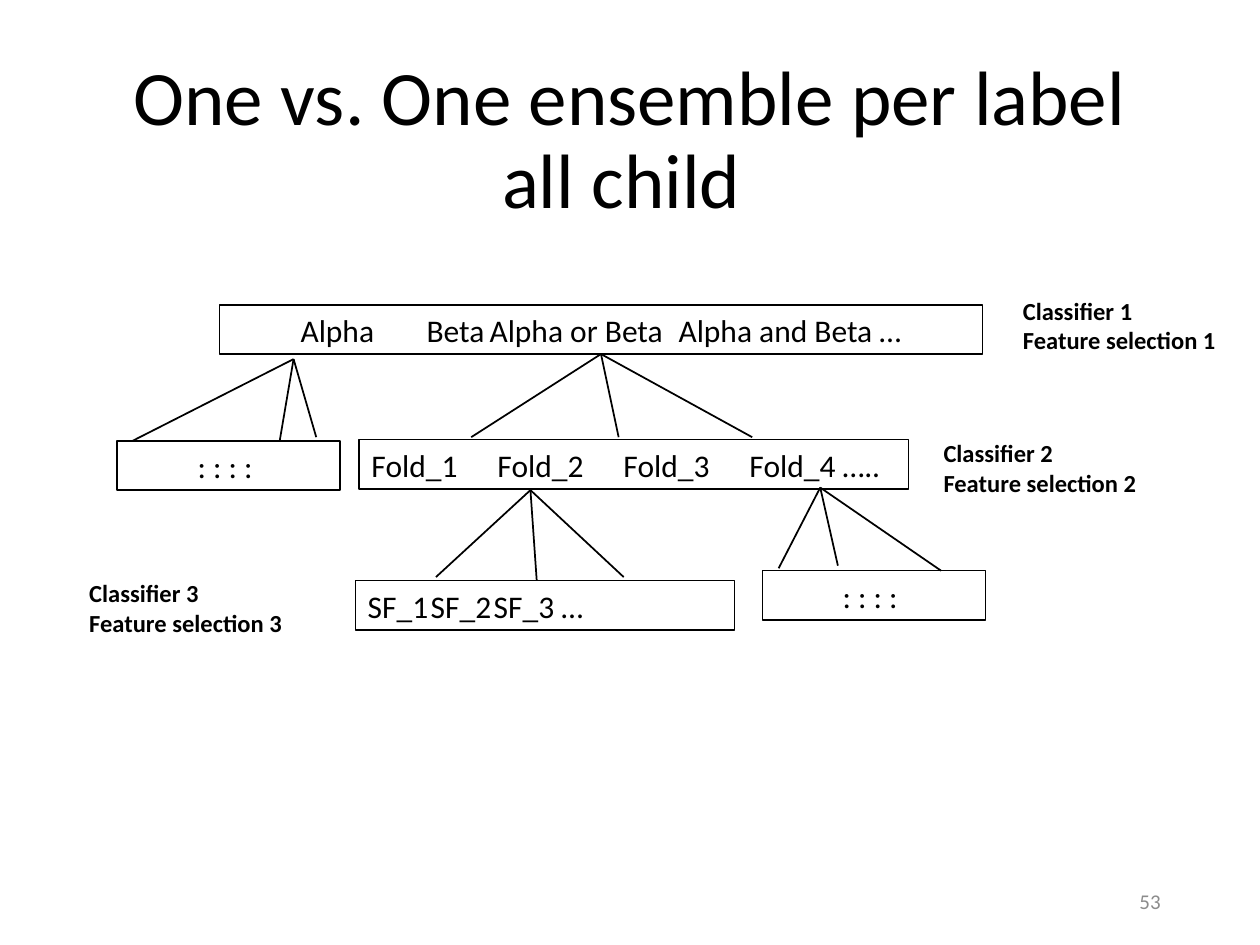
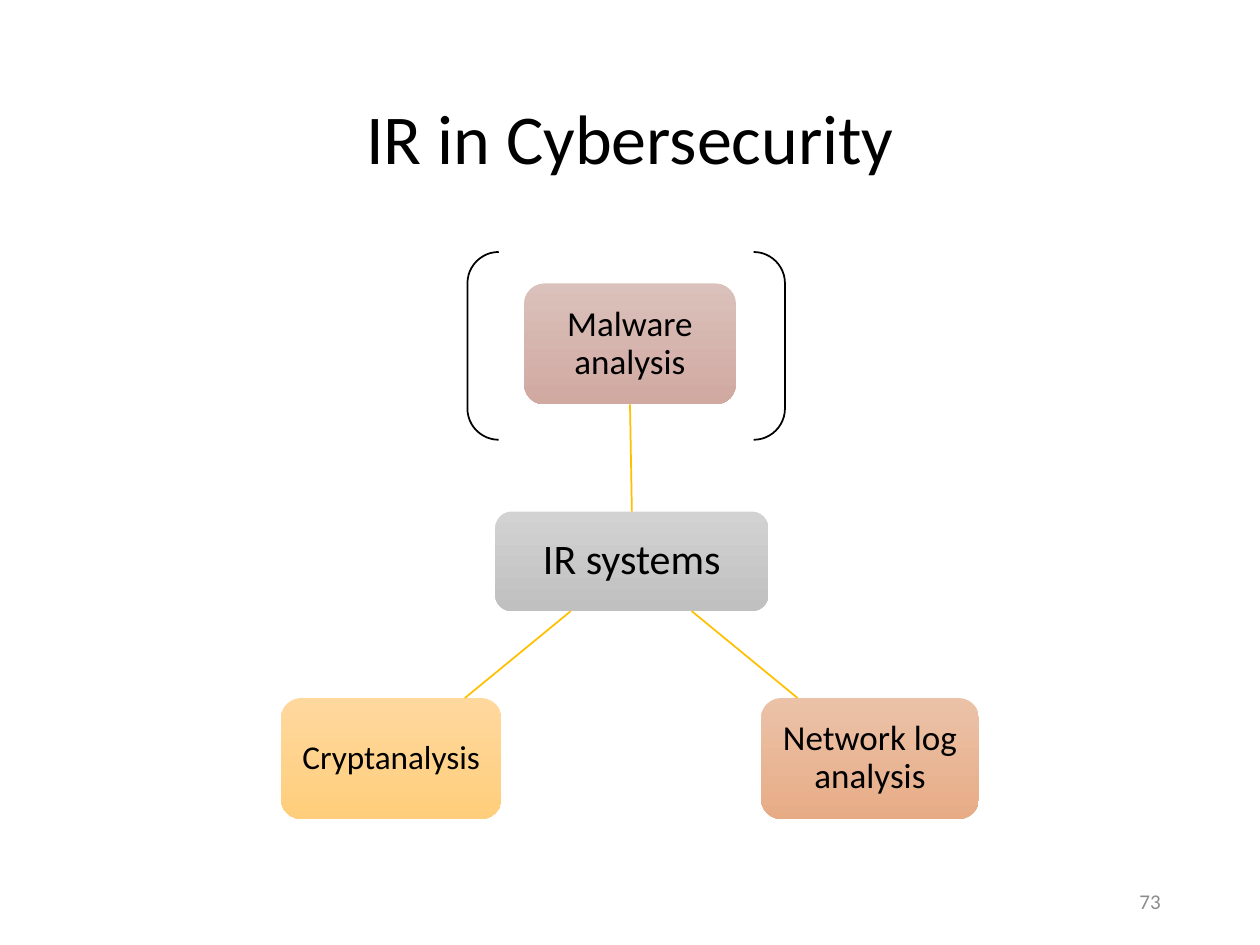
"""Builds two slides: a tree of classifiers and a map of IR in cybersecurity."""
from dataclasses import dataclass

from lxml import etree
from pptx import Presentation
from pptx import util as u
from pptx.dml import color
from pptx.enum import shapes, text
from pptx.oxml import ns


@dataclass(frozen=True)
class Theme:
    font: str = "Calibri"
    ink: str = "000000"
    muted: str = "8C8C8C"
    link: str = "FFC000"
    grey: tuple = ("D2D2D2", "C0C0C0")
    rose: tuple = ("DBC1BB", "D0A9A1")
    orange: tuple = ("EBC2A8", "E7AC86")
    yellow: tuple = ("FFD89E", "FFCE7C")
    title: int = 44
    short_title: int = 40
    hub: int = 24
    node: int = 20
    small_node: int = 19
    body: int = 18
    label: int = 14
    footer: int = 12
    thin: float = 0.75
    line: float = 1


class Deck:
    def __init__(self, theme):
        self.theme = theme
        self.show = Presentation()
        self.show.slide_width, self.show.slide_height = u.Inches(10), u.Inches(7.5)
        self.slide = None

    def new_slide(self, title, size, number):
        self.slide = self.show.slides.add_slide(self.show.slide_layouts[6])
        self.words((0.69, 0.4, 8.62, 1.45), title, size, align="CENTER",
                   anchor="MIDDLE", spacing=0.9)
        self.words((7.06, 6.95, 2.25, 0.4), number, self.theme.footer,
                   ink=self.theme.muted, align="RIGHT", anchor="MIDDLE")

    def set_words(self, shape, content, size, ink=None, bold=False, align="LEFT",
                  anchor="TOP", spacing=None):
        frame = shape.text_frame
        frame.text = content
        frame.word_wrap = True
        frame.vertical_anchor = text.MSO_ANCHOR[anchor]
        for paragraph in frame.paragraphs:
            paragraph.alignment = text.PP_ALIGN[align]
            paragraph.line_spacing = spacing
            for run in paragraph.runs:
                run.font.name = self.theme.font
                run.font.size = u.Pt(size)
                run.font.bold = bold
                run.font.color.rgb = color.RGBColor.from_string(ink or self.theme.ink)

    def words(self, place, content, size, **style):
        box = self.slide.shapes.add_textbox(*map(u.Inches, place))
        self.set_words(box, content, size, **style)

    def outline(self, kind, place, width):
        shape = self.slide.shapes.add_shape(kind, *map(u.Inches, place))
        shape.shadow.inherit = False
        shape.fill.background()
        shape.line.color.rgb = color.RGBColor.from_string(self.theme.ink)
        shape.line.width = u.Pt(width)
        return shape

    def level(self, left, top, width, content, align="LEFT"):
        box = self.outline(shapes.MSO_SHAPE.RECTANGLE, (left, top, width, 0.39),
                           self.theme.thin)
        self.set_words(box, content, self.theme.body, align=align)
        return box

    def node(self, place, content, size, shades):
        box = self.outline(shapes.MSO_SHAPE.ROUNDED_RECTANGLE, place, self.theme.line)
        box.line.fill.background()
        box.fill.gradient()
        box.fill.gradient_angle = 270
        for stop, shade in zip(box.fill.gradient_stops, shades):
            stop.color.rgb = color.RGBColor.from_string(shade)
        self.set_words(box, content, size, align="CENTER", anchor="MIDDLE", spacing=0.9)
        return box

    def line(self, start, end, ink=None):
        link = self.slide.shapes.add_connector(
            shapes.MSO_CONNECTOR.STRAIGHT, *map(u.Inches, (*start, *end)))
        link.line.color.rgb = color.RGBColor.from_string(ink or self.theme.ink)
        link.line.width = u.Pt(self.theme.line)
        etree.SubElement(link.element.spPr, ns.qn("a:effectLst"))
        return link

    def fan(self, apex, ends):
        return [self.line(apex, end) for end in ends]


def classifier_tree(deck):
    deck.new_slide("One vs. One ensemble per label all child ", deck.theme.title, "53")
    classes = deck.level(1.74, 2.42, 6.06, "Alpha\tBeta\tAlpha or Beta\tAlpha and Beta …",
                         "CENTER")
    deck.level(2.85, 3.49, 4.36, "Fold_1\tFold_2\tFold_3\tFold_4 …..")
    deck.level(2.82, 4.61, 3.01, "SF_1\tSF_2\tSF_3 …")
    for left, top in ((0.93, 3.5), (6.05, 4.53)):
        deck.level(left, top, 1.77, ": : : : ", "CENTER")

    deck.fan((2.33, 2.85), ((1.05, 3.5), (2.22, 3.5), (2.51, 3.47)))
    for branch in deck.fan((4.77, 2.81), ((3.74, 3.47), (4.91, 3.47), (5.97, 3.47))):
        branch.begin_connect(classes, 2)
    deck.fan((4.21, 3.89), ((3.46, 4.58), (4.26, 4.61), (4.95, 4.58)))
    deck.fan((6.51, 3.87), ((6.18, 4.51), (6.65, 4.49), (7.47, 4.53)))

    for step, (left, top) in enumerate(((8.02, 2.3), (7.39, 3.43), (0.61, 4.54)), 1):
        deck.words((left, top, 1.86, 0.57),
                   f"Classifier {step}\nFeature selection {step}",
                   deck.theme.label, bold=True)


def cybersecurity_map(deck):
    theme = deck.theme
    deck.new_slide("IR in Cybersecurity", theme.short_title, "73")
    systems = deck.node((3.93, 4.06, 2.17, 0.79), "IR systems", theme.hub, theme.grey)
    malware = deck.node((4.16, 2.25, 1.68, 0.96), "Malware analysis", theme.node, theme.rose)
    deck.node((6.04, 5.54, 1.73, 0.96), "Network log analysis", theme.node, theme.orange)
    deck.node((2.23, 5.54, 1.75, 0.96), "Cryptanalysis", theme.small_node, theme.yellow)

    upward = deck.line((5.01, 4.06), (5, 3.21), theme.link)
    upward.begin_connect(systems, 0)
    upward.end_connect(malware, 2)
    deck.line((5.49, 4.85), (6.33, 5.54), theme.link)
    deck.line((4.53, 4.85), (3.69, 5.54), theme.link)
    deck.outline(shapes.MSO_SHAPE.DOUBLE_BRACKET, (3.71, 2, 2.52, 1.49), theme.line)


def main():
    deck = Deck(Theme())
    classifier_tree(deck)
    cybersecurity_map(deck)
    deck.show.save("out.pptx")


if __name__ == "__main__":
    main()
